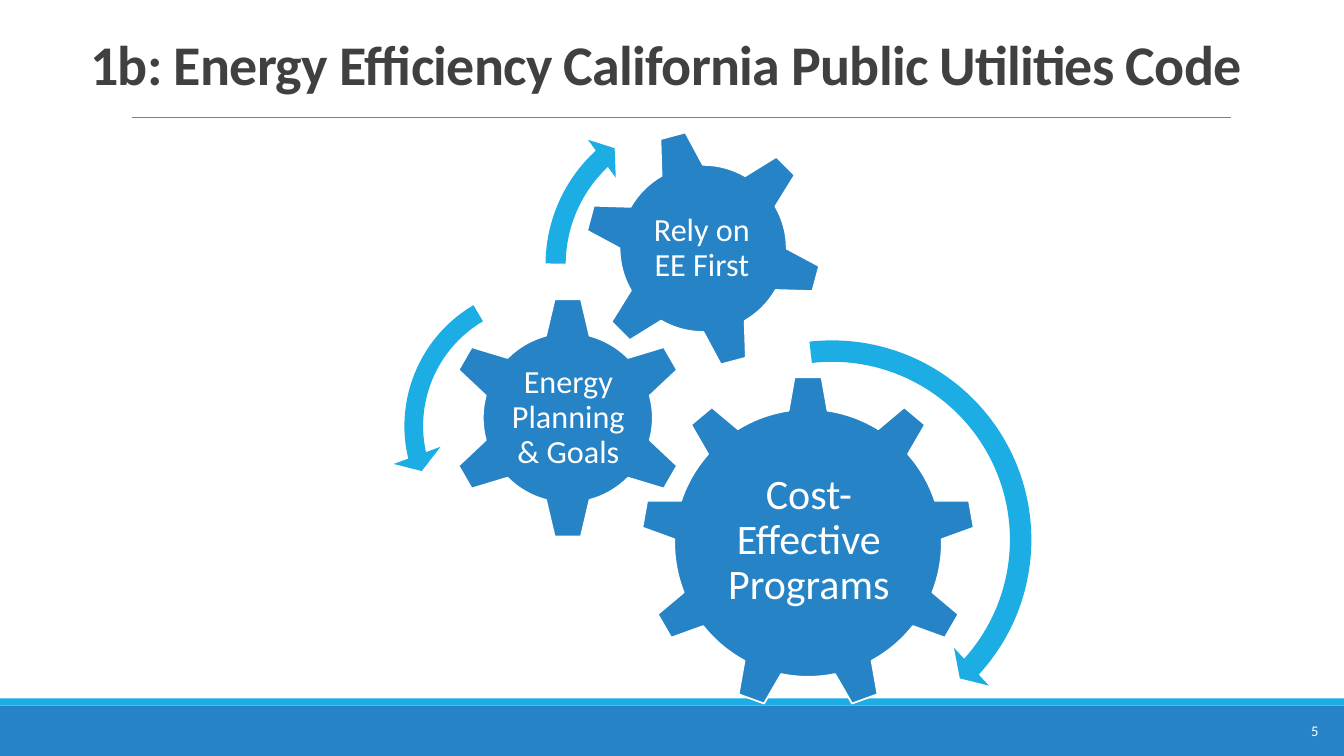
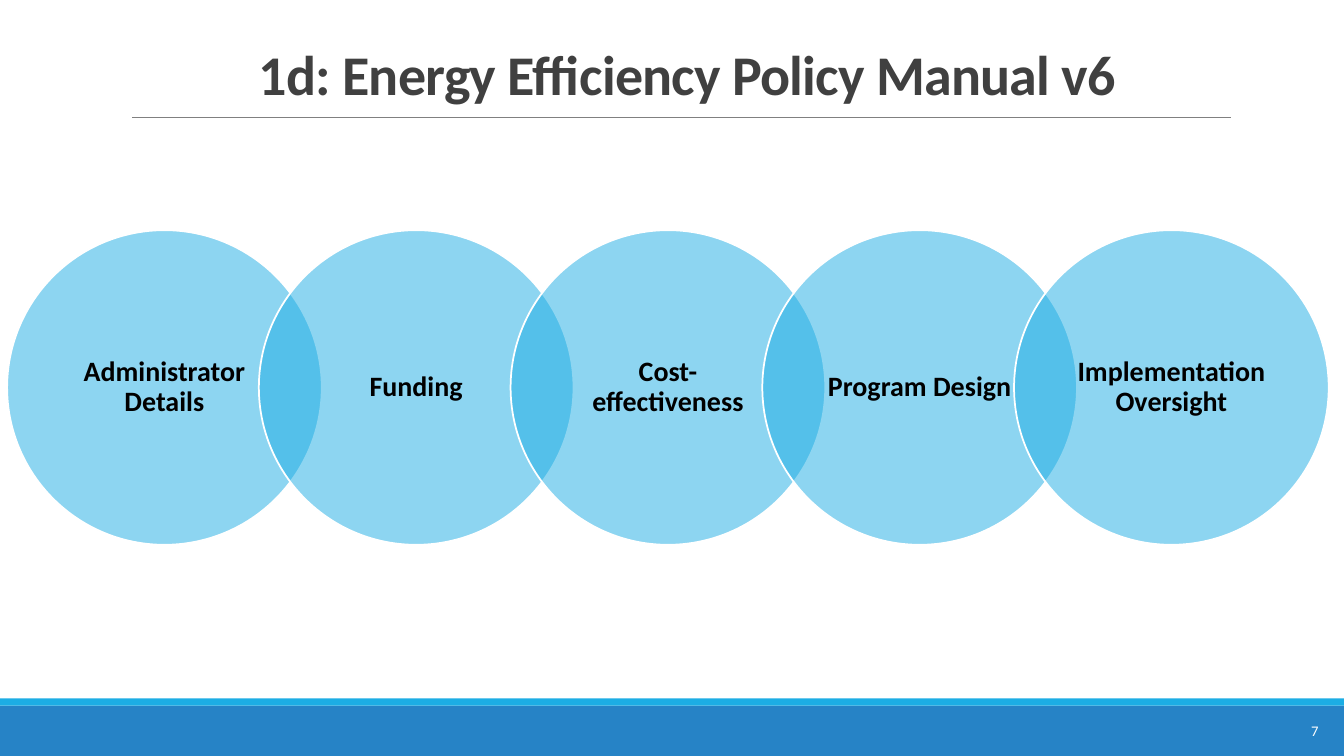
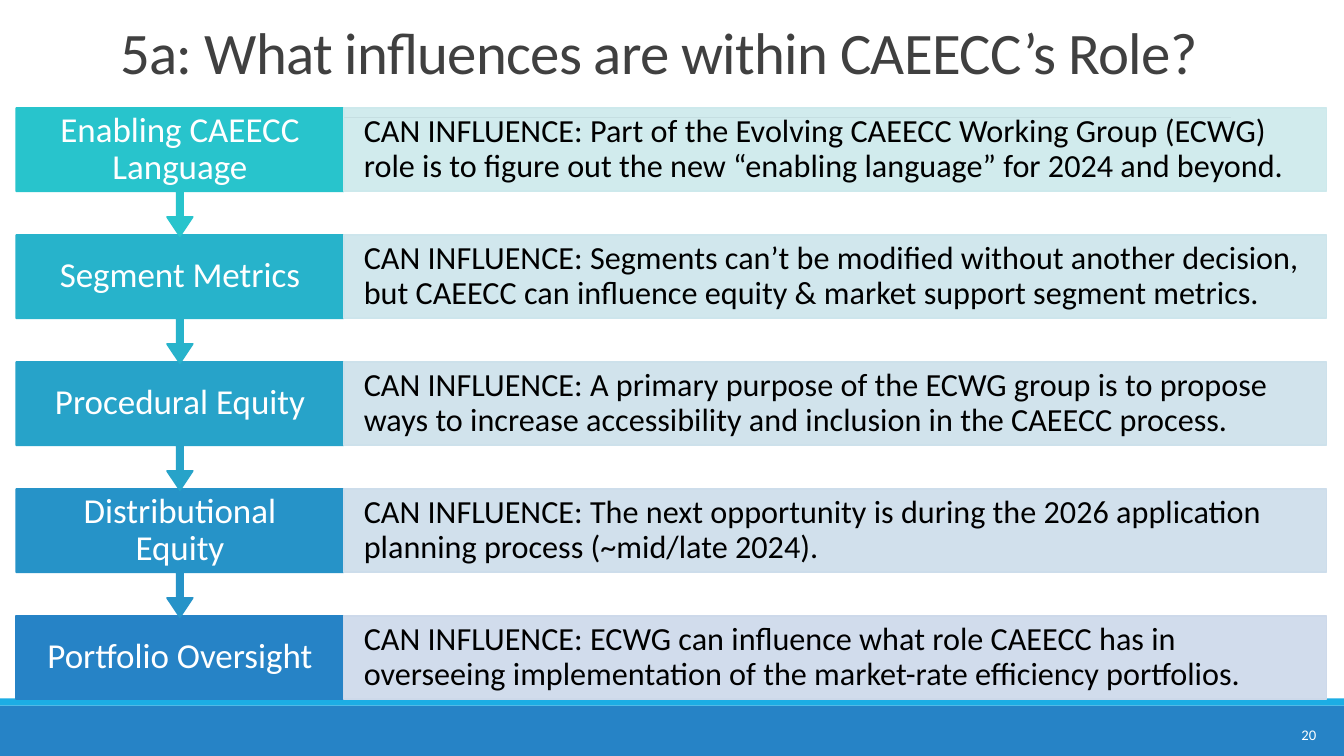
from lxml.etree import SubElement
from pptx import Presentation
from pptx.dml.color import RGBColor
from pptx.enum.shapes import MSO_CONNECTOR, MSO_SHAPE
from pptx.enum.text import MSO_ANCHOR, PP_ALIGN
from pptx.oxml.ns import qn
from pptx.util import Cm, Pt

BLUE, CYAN, WHITE, BLACK = "2683C6", "1CADE4", "FFFFFF", "000000"
TITLE_GREY, RULE_GREY = "404040", "808080"
FONT = "Calibri"


def add_block(slide, kind, box, fill, line=None, opacity=100):
    """Add a preset shape; box is left, top, width and height in centimetres."""
    shape = slide.shapes.add_shape(kind, *[Cm(length) for length in box])
    shape.shadow.inherit = False
    shape.fill.solid()
    shape.fill.fore_color.rgb = RGBColor.from_string(fill)
    if opacity < 100:
        colour = shape._element.spPr.find(qn("a:solidFill")).find(qn("a:srgbClr"))
        SubElement(colour, qn("a:alpha"), val=str(opacity * 1000))
    if line:
        shape.line.color.rgb = RGBColor.from_string(line)
        shape.line.width = Pt(1.25)
    else:
        shape.line.fill.background()
    return shape


def write(shape, text, size, colour, align=PP_ALIGN.CENTER, bold=False,
          anchor=MSO_ANCHOR.MIDDLE, spacing=0.9, margins=(0.08, 0)):
    """Set one formatted paragraph; margins are horizontal and vertical in centimetres."""
    frame = shape.text_frame
    frame.text = text
    frame.word_wrap = True
    frame.vertical_anchor = anchor
    frame.margin_left = frame.margin_right = Cm(margins[0])
    frame.margin_top = frame.margin_bottom = Cm(margins[1])
    paragraph = frame.paragraphs[0]
    paragraph.alignment = align
    paragraph.line_spacing = spacing
    run = paragraph.runs[0]
    run.font.name = FONT
    run.font.size = Pt(size)
    run.font.bold = bold
    run.font.color.rgb = RGBColor.from_string(colour)
    return run


presentation = Presentation()
presentation.slide_width = Cm(33.87)
presentation.slide_height = Cm(19.05)

# Shared frame: bands, rule, title and page number
pages = [
    ("1b: Energy Efficiency California Public Utilities Code", 40, True,
     (-0.1, 0.61, 33.78, 1.96), "5", (29.85, 17.91)),
    ("1d: Energy Efficiency Policy Manual v6", 40, True,
     (2.72, 0.38, 29.21, 2.44), "7", (29.85, 17.91)),
    ("5a: What influences are within CAEECC’s Role?", 42, False,
     (0.41, 0.41, 32.39, 1.9), "20", (29.79, 18.01)),
]
slides = []
for title, size, bold, title_box, number, number_place in pages:
    slide = presentation.slides.add_slide(presentation.slide_layouts[6])
    slides.append(slide)
    add_block(slide, MSO_SHAPE.RECTANGLE, (0, 17.78, 33.87, 1.27), BLUE)
    add_block(slide, MSO_SHAPE.RECTANGLE, (0, 17.6, 33.87, 0.18), CYAN)
    rule = slide.shapes.add_connector(
        MSO_CONNECTOR.STRAIGHT, Cm(3.33), Cm(2.95), Cm(31.01), Cm(2.95))
    rule.line.color.rgb = RGBColor.from_string(RULE_GREY)
    rule.line.width = Pt(0.5)
    SubElement(rule._element.spPr, qn("a:effectLst"))

    title_shape = slide.shapes.add_textbox(*[Cm(length) for length in title_box])
    run = write(title_shape, title, size, TITLE_GREY, bold=bold,
                anchor=MSO_ANCHOR.BOTTOM, spacing=0.85, margins=(0.25, 0.13))
    run._r.get_or_add_rPr().set("spc", "-50")
    number_shape = slide.shapes.add_textbox(
        *[Cm(length) for length in number_place], Cm(3.63), Cm(1.02))
    write(number_shape, number, 10.5, WHITE, PP_ALIGN.RIGHT,
          spacing=1, margins=(0.25, 0.13))

gear_slide, circle_slide, influence_slide = slides

# Gears with their turning arrows
gears = [
    ("Cost-Effective Programs", 30, MSO_SHAPE.GEAR_9, 0,
     (16.15, 9.47, 8.43, 8.43), (17.86, 11.46, 5.05, 4.34)),
    ("Energy Planning & Goals", 23, MSO_SHAPE.GEAR_6, 0,
     (11.25, 7.47, 6.12, 6.12), (12.8, 9.02, 3.05, 3.02)),
    ("Rely on EE First", 23, MSO_SHAPE.GEAR_6, 345,
     (14.71, 3.25, 6.02, 6.02), (16, 4.57, 3.38, 3.38)),
]
for text, size, kind, rotation, gear_box, label_box in gears:
    gear = add_block(gear_slide, kind, gear_box, BLUE, WHITE)
    gear.rotation = rotation
    label = gear_slide.shapes.add_textbox(*[Cm(length) for length in label_box])
    write(label, text, size, WHITE)

turning_arrows = [
    (MSO_SHAPE.CIRCULAR_ARROW, 15.57, 8.2, 10.8, 0,
     (0.05, 2.99, 25.41, 158.09, 0.06)),
    (MSO_SHAPE.LEFT_CIRCULAR_ARROW, 9.8, 6.81, 7.85, 352.2,
     (0.06, 4.3, 104.89, 148.38, 0.08)),
    (MSO_SHAPE.CIRCULAR_ARROW, 13.41, 2.44, 8.46, 5.3,
     (0.06, 3.94, 133.14, 105.08, 0.07)),
]
for kind, left, top, diameter, rotation, adjustments in turning_arrows:
    arrow = add_block(gear_slide, kind, (left, top, diameter, diameter), CYAN)
    arrow.rotation = rotation
    for index, value in enumerate(adjustments):
        arrow.adjustments[index] = value

# Row of circles, each overlapping the one before by a fifth
topics = ["Administrator Details", "Funding", "Cost-effectiveness",
          "Program Design", "Implementation Oversight"]
diameter = 7.93
for index, topic in enumerate(topics):
    circle = add_block(circle_slide, MSO_SHAPE.OVAL,
                       (0.18 + index * diameter * 0.8, 5.8, diameter, diameter),
                       CYAN, WHITE, opacity=50)
    write(circle, topic, 20, BLACK, bold=True, margins=(0.42, 0.08))

# Chain of influences; lower rows lie behind the arrows from above
influences = [
    ("Enabling CAEECC Language", "28C4CC", "CDE9EC",
     "Part of the Evolving CAEECC Working Group (ECWG) role is to figure out "
     "the new “enabling language” for 2024 and beyond."),
    ("Segment Metrics", "27B3CB", "CDE5EC",
     "Segments can’t be modified without another decision, but CAEECC can "
     "influence equity & market support segment metrics."),
    ("Procedural Equity", "27A3C9", "CDE1EB",
     "A primary purpose of the ECWG group is to propose ways to increase "
     "accessibility and inclusion in the CAEECC process."),
    ("Distributional Equity", "2693C8", "CDDDEB",
     "The next opportunity is during the 2026 application planning process "
     "(~mid/late 2024)."),
    ("Portfolio Oversight", BLUE, "CDD9EA",
     "ECWG can influence what role CAEECC has in overseeing implementation of "
     "the market-rate efficiency portfolios."),
]
row_left, row_top, row_pitch, row_height = 0.41, 2.72, 3.2, 2.1
label_width, detail_width = 8.25, 24.77
last_row = len(influences) - 1
for index, (name, colour, tint, detail) in reversed(list(enumerate(influences))):
    top = row_top + index * row_pitch
    if index == last_row:
        label = add_block(influence_slide, MSO_SHAPE.RECTANGLE,
                          (row_left, top, label_width, row_height), colour, colour)
    else:
        label = add_block(influence_slide, MSO_SHAPE.DOWN_ARROW_CALLOUT,
                          (row_left, top, label_width, row_height / 0.65), colour, colour)
        for position, value in enumerate((0.05, 0.1, 0.15, 0.65)):
            label.adjustments[position] = value
    write(label, name, 25, WHITE, margins=(0.58, 0))
    detail_block = add_block(influence_slide, MSO_SHAPE.RECTANGLE,
                             (row_left + label_width, top, detail_width, row_height),
                             tint, tint, opacity=90)
    write(detail_block, "CAN INFLUENCE: " + detail, 23, BLACK,
          PP_ALIGN.LEFT, margins=(0.51, 0))

presentation.save("out.pptx")
